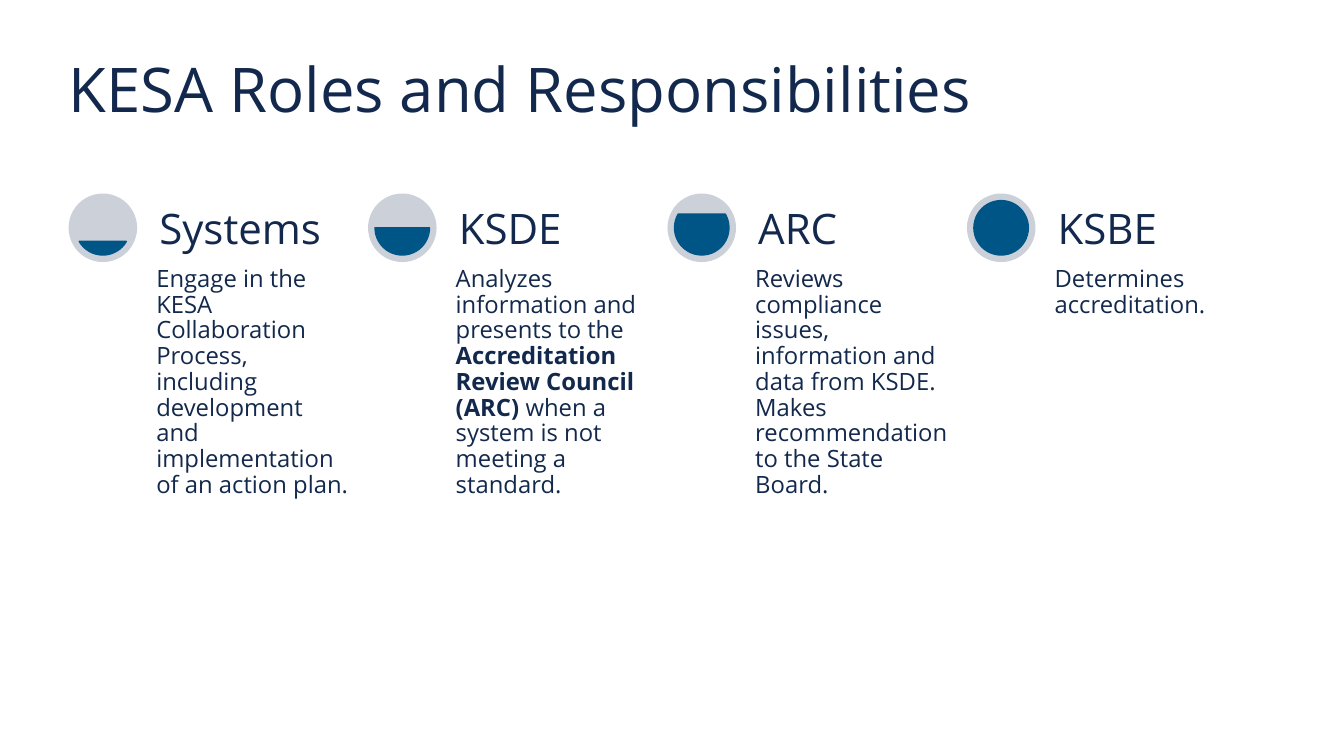
from dataclasses import dataclass

from pptx import Presentation
from pptx.dml.color import RGBColor
from pptx.enum import shapes, text
from pptx.util import Inches, Pt


@dataclass(frozen=True)
class Theme:
    font: str = "Open Sans"
    ink: RGBColor = RGBColor(0x12, 0x28, 0x4C)
    ring: RGBColor = RGBColor(0xCC, 0xD1, 0xD9)
    level: RGBColor = RGBColor(0x00, 0x55, 0x87)
    title: int = 44
    head: int = 30
    body: int = 17


THEME = Theme()
LEFT, TOP, STEP = 0.68, 1.92, 2.97
DISC, INSET = 0.68, 0.07

# Heading, angle of the fill line above or below the centre, body runs (text, bold)
ROLES = [
    ("Systems", 30, [
        ("Engage in the KESA Collaboration Process, including development "
         "and implementation of an action plan.", False)]),
    ("KSDE", 0, [
        ("Analyzes information and presents to the ", False),
        ("Accreditation Review Council (ARC)", True),
        (" when a system is not meeting a standard.", False)]),
    ("ARC", -30, [
        ("Reviews compliance issues, information and data from KSDE. "
         "Makes recommendation to the State Board.", False)]),
    ("KSBE", -90, [("Determines accreditation.", False)]),
]


def add_text(slide, box, runs, size, anchor, pad=0.0, leading=1.0):
    frame = slide.shapes.add_textbox(*map(Inches, box)).text_frame
    frame.word_wrap = True
    frame.vertical_anchor = anchor
    frame.margin_left = frame.margin_right = Inches(pad)
    frame.margin_top = frame.margin_bottom = Inches(pad)
    para = frame.paragraphs[0]
    para.line_spacing = leading
    for words, bold in runs:
        run = para.add_run()
        run.text = words
        run.font.name = THEME.font
        run.font.size = Pt(size)
        run.font.bold = bold
        run.font.color.rgb = THEME.ink


def add_round(slide, kind, left, top, size, color):
    shape = slide.shapes.add_shape(
        kind, *map(Inches, (left, top, size, size)))
    shape.shadow.inherit = False
    shape.fill.solid()
    shape.fill.fore_color.rgb = color
    shape.line.fill.background()
    return shape


def add_gauge(slide, left, angle):
    """Draw a disc filled from the bottom up to the chord at the given angle."""
    kinds = shapes.MSO_SHAPE
    add_round(slide, kinds.OVAL, left, TOP, DISC, THEME.ring)
    fill = add_round(slide, kinds.CHORD, left + INSET, TOP + INSET,
                     DISC - 2 * INSET, THEME.level)
    fill.line.color.rgb = THEME.level
    fill.line.width = Pt(1)
    # Angles are stored in 60000ths of a degree, adjustments in 100000ths
    fill.adjustments[0] = angle % 360 * 0.6
    fill.adjustments[1] = (180 - angle) * 0.6


def add_role(slide, left, head, angle, body):
    add_gauge(slide, left, angle)
    side = left + 0.82
    add_text(slide, (side, TOP + DISC, 2.01, 2.86), body, THEME.body,
             text.MSO_ANCHOR.TOP, 0.05, 0.9)
    add_text(slide, (side, TOP, 2.01, DISC), [(head, False)], THEME.head,
             text.MSO_ANCHOR.BOTTOM, 0.08, 0.9)


def main():
    deck = Presentation()
    deck.slide_width, deck.slide_height = Inches(13.33), Inches(7.5)
    slide = deck.slides.add_slide(deck.slide_layouts[6])
    add_text(slide, (LEFT, 0.5, 11.74, 0.75),
             [("KESA Roles and Responsibilities", False)],
             THEME.title, text.MSO_ANCHOR.MIDDLE)
    for i, role in enumerate(ROLES):
        add_role(slide, LEFT + i * STEP, *role)
    deck.save("out.pptx")


if __name__ == "__main__":
    main()
